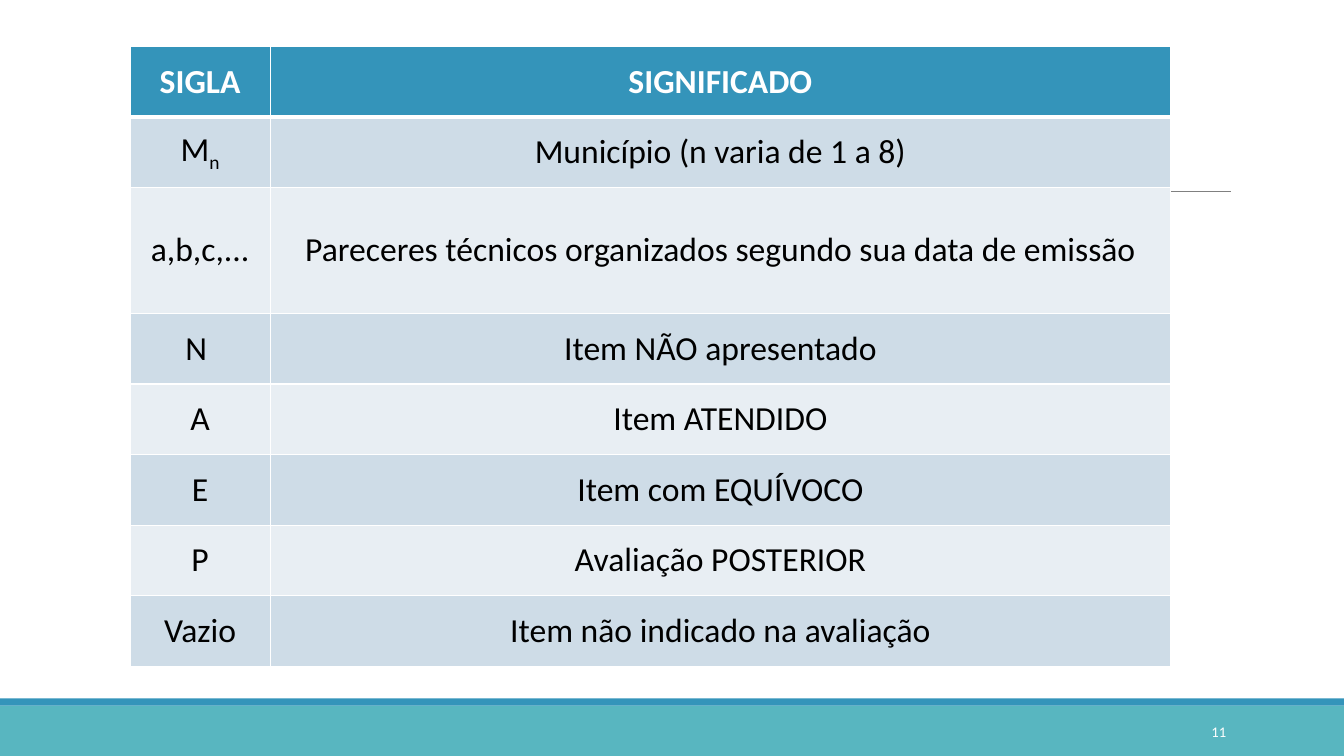
from dataclasses import dataclass

from lxml.etree import SubElement
from pptx import Presentation
from pptx.dml.color import RGBColor
from pptx.enum.shapes import MSO_CONNECTOR, MSO_SHAPE
from pptx.enum.text import MSO_ANCHOR, PP_ALIGN
from pptx.oxml.ns import qn
from pptx.util import Inches, Pt


@dataclass(frozen=True)
class Theme:
    font: str = "Calibri"
    blue: str = "3494BA"
    teal: str = "58B6C0"
    gray: str = "808080"
    white: str = "FFFFFF"
    black: str = "000000"
    bands: tuple = ("CEDCE7", "E8EEF3")
    table_size: float = 24
    number_size: float = 10.5


THEME = Theme()
SLIDE_W, SLIDE_H = 13.33, 7.5
COL_WIDTHS = (1.39, 8.93)
ROW_H, TALL_ROW_H, TALL_ROW = 0.7, 1.25, 2
SUBSCRIPT = "-25000"

# Each cell is a tuple of runs; a second run is a subscript.
ROWS = [
    (("SIGLA",), ("SIGNIFICADO",)),
    (("M", "n"), ("Município (n varia de 1 a 8)",)),
    (("a,b,c,...",), ("Pareceres técnicos organizados segundo sua data de emissão",)),
    (("N ",), ("Item NÃO apresentado",)),
    (("A",), ("Item ATENDIDO",)),
    (("E",), ("Item com EQUÍVOCO",)),
    (("P",), ("Avaliação POSTERIOR",)),
    (("Vazio",), ("Item não indicado na avaliação",)),
]


def add_run(p, text, size, color, bold=False):
    r = p.add_run()
    r.text = text
    r.font.name = THEME.font
    r.font.size = Pt(size)
    r.font.bold = bold
    r.font.color.rgb = RGBColor.from_string(color)
    return r


def add_bar(s, x, y, w, h, color):
    sp = s.shapes.add_shape(MSO_SHAPE.RECTANGLE, Inches(x), Inches(y), Inches(w), Inches(h))
    sp.shadow.inherit = False
    sp.fill.solid()
    sp.fill.fore_color.rgb = RGBColor.from_string(color)
    sp.line.fill.background()


def add_footer(s, x, y, w, h, number):
    """Teal band with a thin blue strip on top and the slide number at right."""
    strip = 0.07
    add_bar(s, x, y + strip, w, h - strip, THEME.teal)
    add_bar(s, x, y, w, strip, THEME.blue)
    box = s.shapes.add_textbox(Inches(x + w - 2.5), Inches(y + 0.13), Inches(1.43), Inches(0.4))
    tf = box.text_frame
    tf.word_wrap = True
    tf.vertical_anchor = MSO_ANCHOR.MIDDLE
    p = tf.paragraphs[0]
    p.alignment = PP_ALIGN.RIGHT
    add_run(p, number, THEME.number_size, THEME.white)


def add_rule(s, x, y, w):
    line = s.shapes.add_connector(
        MSO_CONNECTOR.STRAIGHT, Inches(x), Inches(y), Inches(x + w), Inches(y))
    line.line.color.rgb = RGBColor.from_string(THEME.gray)
    line.line.width = Pt(0.5)
    SubElement(line._element.spPr, qn("a:effectLst"))


def set_borders(cell, top, bottom):
    """White borders; must run before the cell's fill is set."""
    tcPr = cell._tc.get_or_add_tcPr()
    for side, width in (("L", 1), ("R", 1), ("T", top), ("B", bottom)):
        ln = SubElement(tcPr, qn(f"a:ln{side}"), w=str(Pt(width)))
        SubElement(SubElement(ln, qn("a:solidFill")), qn("a:srgbClr"), val=THEME.white)


def fill_cell(cell, row, runs):
    header = row == 0
    set_borders(cell, top=3 if row == 1 else 1, bottom=3 if header else 1)
    cell.fill.solid()
    fill = THEME.blue if header else THEME.bands[(row - 1) % 2]
    cell.fill.fore_color.rgb = RGBColor.from_string(fill)
    cell.vertical_anchor = MSO_ANCHOR.MIDDLE
    p = cell.text_frame.paragraphs[0]
    p.alignment = PP_ALIGN.CENTER
    color = THEME.white if header else THEME.black
    for i, text in enumerate(runs):
        r = add_run(p, text, THEME.table_size, color, header)
        if i:
            r._r.get_or_add_rPr().set("baseline", SUBSCRIPT)


def add_legend_table(s, x, y):
    heights = [TALL_ROW_H if i == TALL_ROW else ROW_H for i in range(len(ROWS))]
    table = s.shapes.add_table(
        len(ROWS), len(COL_WIDTHS), Inches(x), Inches(y),
        Inches(sum(COL_WIDTHS)), Inches(sum(heights))).table
    for col, width in zip(table.columns, COL_WIDTHS):
        col.width = Inches(width)
    for i, (height, cells) in enumerate(zip(heights, ROWS)):
        table.rows[i].height = Inches(height)
        for j, runs in enumerate(cells):
            fill_cell(table.cell(i, j), i, runs)


def main():
    prs = Presentation()
    prs.slide_width, prs.slide_height = Inches(SLIDE_W), Inches(SLIDE_H)
    s = prs.slides.add_slide(prs.slide_layouts[6])
    add_footer(s, 0, 6.93, SLIDE_W, SLIDE_H - 6.93, "11")
    add_rule(s, 1.31, 1.9, 10.9)
    add_legend_table(s, 1.29, 0.46)
    prs.save("out.pptx")


if __name__ == "__main__":
    main()
